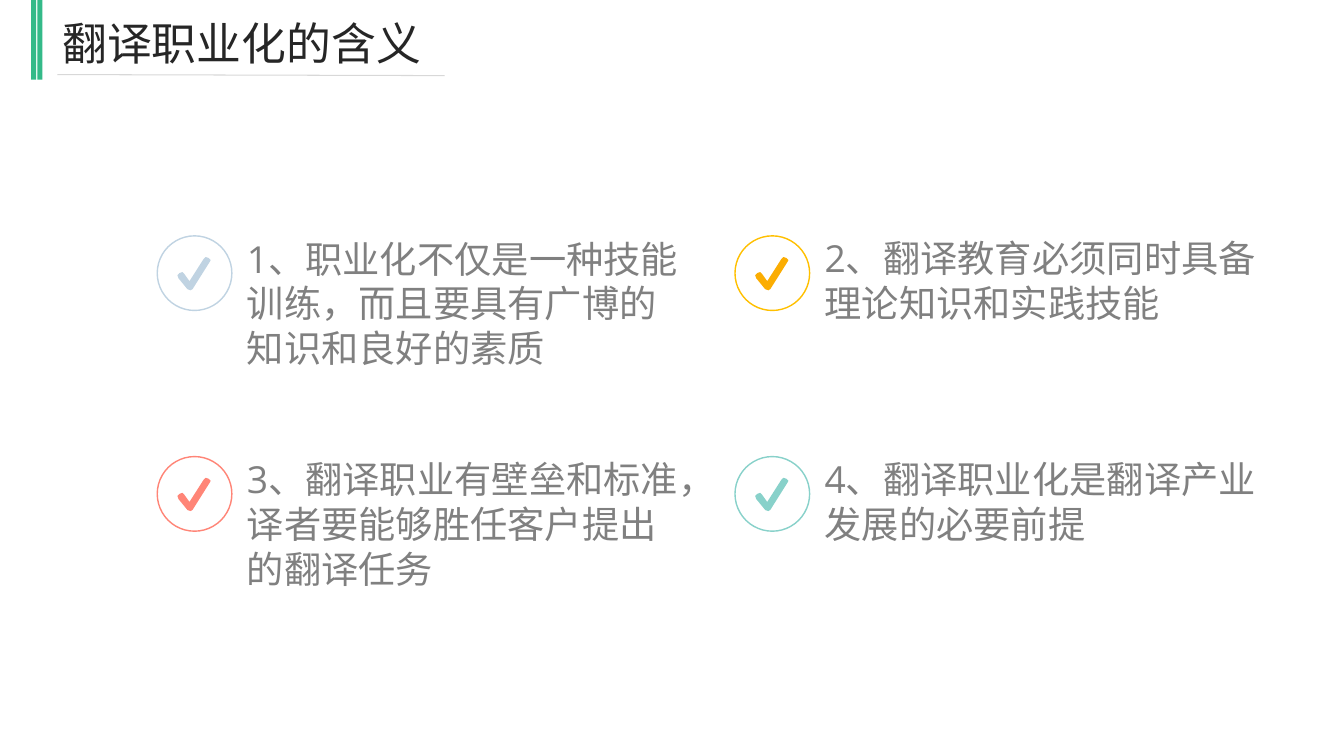
from pptx import Presentation
from pptx.dml.color import RGBColor
from pptx.enum.shapes import MSO_CONNECTOR, MSO_SHAPE
from pptx.enum.text import MSO_AUTO_SIZE
from pptx.oxml.ns import qn
from pptx.util import Inches, Pt
from lxml import etree

# Tick outline in hundredths of an inch, from the corner of its ring
TICK = [(33, 54), (30, 53), (21, 42), (20, 39), (22, 37), (25, 36), (27, 38),
        (32, 45), (46, 23), (48, 21), (51, 22), (53, 24), (52, 26), (35, 53)]

# Text, line count, ring colour, tick colour; two per row
POINTS = [
    ("1、职业化不仅是一种技能训练，而且要具有广博的知识和良好的素质", 3, "C0D3E2", "C0D3E2"),
    ("2、翻译教育必须同时具备理论知识和实践技能", 2, "FFC000", "FBAD02"),
    ("3、翻译职业有壁垒和标准，译者要能够胜任客户提出的翻译任务", 3, "FF8577", "FF8577"),
    ("4、翻译职业化是翻译产业发展的必要前提", 2, "88D1CA", "88D1CA"),
]


def color(code):
    return RGBColor.from_string(code)


class Deck:
    green, dark, gray, pale = "34BA89", "262626", "808080", "D8D8D8"
    head, body = "Roboto Condensed", "Open Sans"

    def __init__(self, slide):
        self.shapes = slide.shapes

    def bar(self, x, y, w, h):
        bar = self.shapes.add_shape(
            MSO_SHAPE.RECTANGLE, Inches(x), Inches(y), Inches(w), Inches(h))
        self.paint(bar, self.green)

    def paint(self, shape, code):
        """Fill a shape flat, with no outline or shadow."""
        shape.shadow.inherit = False
        shape.fill.solid()
        shape.fill.fore_color.rgb = color(code)
        shape.line.fill.background()

    def ring(self, x, y, size, code):
        ring = self.shapes.add_shape(
            MSO_SHAPE.OVAL, Inches(x), Inches(y), Inches(size), Inches(size))
        ring.shadow.inherit = False
        ring.fill.background()
        ring.line.color.rgb = color(code)
        ring.line.width = Pt(1)

    def tick(self, x, y, code):
        pen = self.shapes.build_freeform(*TICK[0], scale=Inches(0.01))
        pen.add_line_segments(TICK[1:], close=True)
        self.paint(pen.convert_to_shape(Inches(x), Inches(y)), code)

    def text(self, x, y, w, h, words, size, font, code):
        box = self.shapes.add_textbox(Inches(x), Inches(y), Inches(w), Inches(h))
        frame = box.text_frame
        frame.word_wrap = True
        frame.auto_size = MSO_AUTO_SIZE.SHAPE_TO_FIT_TEXT
        para = frame.paragraphs[0]
        para.text = words
        para.font.size = Pt(size)
        para.font.name = font
        para.font.color.rgb = color(code)

    def rule(self, x1, y1, x2, y2):
        rule = self.shapes.add_connector(
            MSO_CONNECTOR.STRAIGHT, Inches(x1), Inches(y1), Inches(x2), Inches(y2))
        rule.line.color.rgb = color(self.pale)
        rule.line.width = Pt(0.75)
        etree.SubElement(rule._element.spPr, qn("a:effectLst"))

    def point(self, x, y, words, lines, ring, tick):
        """Add a ringed tick with its statement on the right."""
        self.ring(x, y, 0.74, ring)
        self.tick(x, y, tick)
        self.text(x + 0.79, y - 0.05, 4.58, 0.1 + 0.45 * lines,
                  words, 26.6, self.body, self.gray)


def main():
    prs = Presentation()
    prs.slide_width, prs.slide_height = Inches(13.33), Inches(7.5)
    deck = Deck(prs.slides.add_slide(prs.slide_layouts[6]))
    for i, point in enumerate(POINTS):
        row, col = divmod(i, 2)
        deck.point(1.56 + 5.73 * col, 2.34 + 2.19 * row, *point)
    for x in (0.31, 0.37):
        deck.bar(x, 0, 0.05, 0.79)
    deck.text(0.52, 0.11, 4.58, 0.64, "翻译职业化的含义", 32, deck.head, deck.dark)
    deck.rule(0.57, 0.74, 4.41, 0.75)
    prs.save("out.pptx")


if __name__ == "__main__":
    main()
